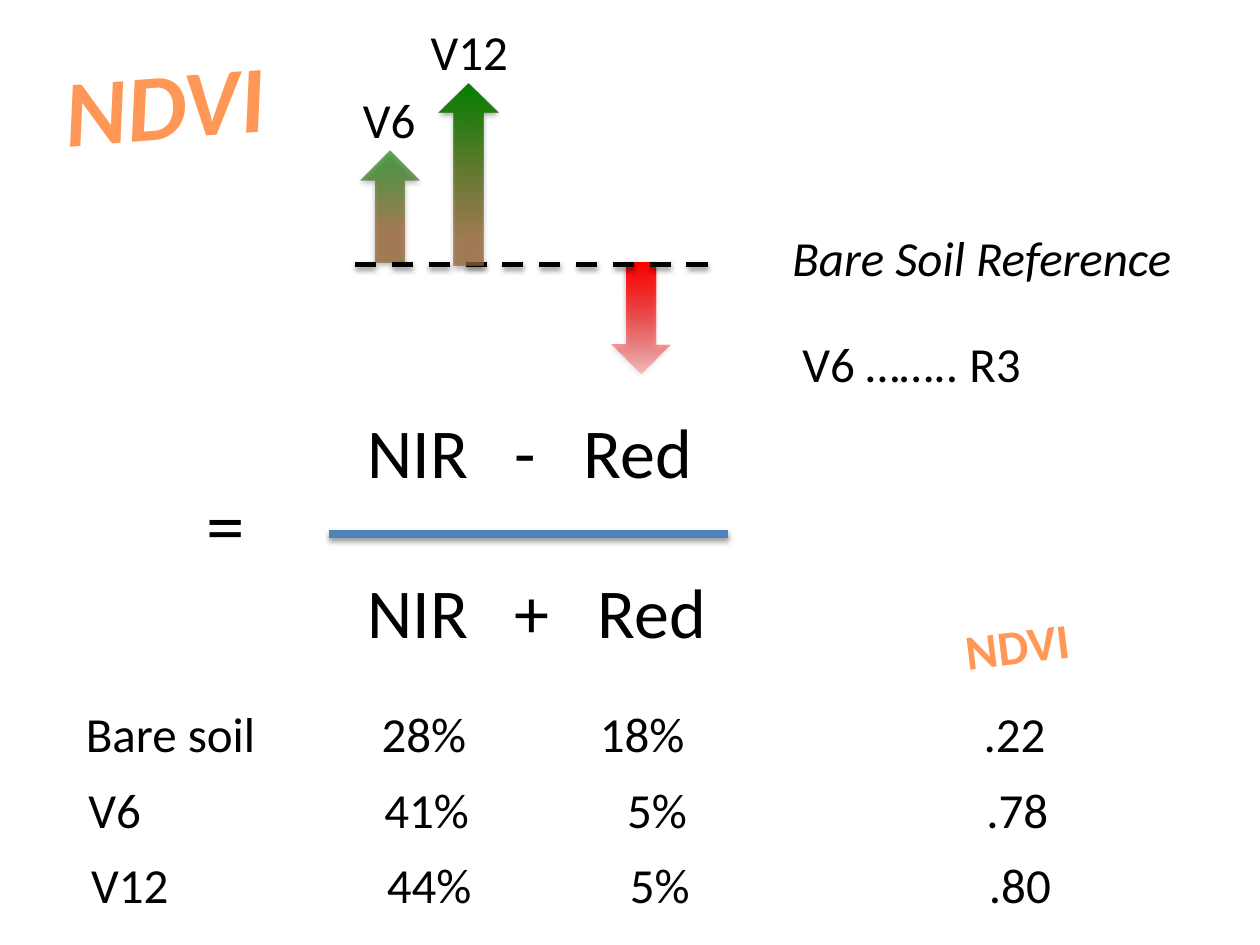
from lxml.etree import SubElement, Element
from pptx import Presentation
from pptx.dml.color import RGBColor as RGB
from pptx.enum.dml import MSO_LINE as Dash
from pptx.enum.shapes import MSO_CONNECTOR as Conn, MSO_SHAPE as Kind
from pptx.oxml.ns import qn
from pptx.util import Pt

HUES = {
    "ink": "000000",
    "title": "FF9856",
    "rule": "4F81BD",
    "soil": "996633",
    "leaf": "008000",
    "red": "FF0000",
    "paper": "FFFFFF",
}


def hue(name):
    return RGB.from_string(HUES[name])


def add_tabs(para, tabs):
    stops = Element(qn("a:tabLst"))
    for pos, side in tabs:
        SubElement(stops, qn("a:tab"), pos=str(Pt(pos)), algn=side)
    para._p.get_or_add_pPr().insert(0, stops)


def add_text(slide, text, x, y, w, h, size=28, color="ink",
             bold=False, slant=False, turn=0, tabs=()):
    box = slide.shapes.add_textbox(Pt(x), Pt(y), Pt(w), Pt(h))
    box.rotation = turn
    frame = box.text_frame
    frame.word_wrap = bool(tabs)
    para = frame.paragraphs[0]
    para.text = text
    font = para.font
    font.name, font.size = "Calibri", Pt(size)
    font.bold, font.italic = bold, slant
    font.color.rgb = hue(color)
    if tabs:
        add_tabs(para, tabs)
    return box


def add_shade(shape, alpha, dist):
    props = shape._element.spPr
    effects = SubElement(props, qn("a:effectLst"))
    shade = SubElement(effects, qn("a:outerShdw"), blurRad=str(Pt(3.1)),
                       dist=str(Pt(dist)), dir="5400000", rotWithShape="0")
    tint = SubElement(shade, qn("a:srgbClr"), val=HUES["ink"])
    SubElement(tint, qn("a:alpha"), val=str(alpha * 1000))


def add_arrow(slide, x, y, h, stops, turn=0):
    arrow = slide.shapes.add_shape(Kind.UP_ARROW, Pt(x), Pt(y), Pt(34), Pt(h))
    arrow.rotation = turn
    arrow.line.fill.background()
    arrow.fill.gradient()
    arrow.fill.gradient_angle = 90
    for stop, (pos, color, alpha) in zip(arrow.fill.gradient_stops, stops):
        stop.position = pos / 100
        stop.color.rgb = hue(color)
    tints = arrow._element.spPr.iter(qn("a:srgbClr"))
    for tint, (pos, color, alpha) in zip(tints, stops):
        SubElement(tint, qn("a:alpha"), val=str(alpha * 1000))
    add_shade(arrow, 35, 1.8)


def add_rule(slide, x, y, w, color, width, dash=None):
    rule = slide.shapes.add_connector(Conn.STRAIGHT, Pt(x), Pt(y), Pt(x + w), Pt(y))
    rule.line.color.rgb = hue(color)
    rule.line.width = Pt(width)
    if dash:
        rule.line.dash_style = dash
    add_shade(rule, 38, 1.6)


def add_ratio(slide):
    add_text(slide, "=", 110.9, 268.6, 36.7, 60.5, size=44)
    for sign, y, w, red in (("-", 229.7, 203, 123.5), ("+", 321.1, 211, 131.5)):
        add_text(slide, f"NIR\t{sign}\tRed", 203, y, w, 55.4, size=40,
                 tabs=((84, "l"), (red, "l")))
    add_rule(slide, 187.9, 305.3, 228.3, "rule", 4.5)


def add_rows(slide):
    tabs = ((169, "l"), (342, "r"), (513, "l"))
    rows = (("Bare soil", "28%", "18%", ".22"),
            ("V6", "41%", "5%", ".78"),
            ("V12", "44%", "5%", ".80"))
    for i, row in enumerate(rows):
        add_text(slide, "\t".join(row), 42 + 1.5 * i, 398.6 + 43.2 * i, 573, 41, tabs=tabs)


def add_shift(slide):
    add_arrow(slide, 205.9, 86.4, 63.4, ((30, "soil", 75), (100, "leaf", 65)))
    add_arrow(slide, 349.2, 149.8, 63.4, ((0, "red", 100), (100, "red", 20)), turn=180)
    add_rule(slide, 203, 151.2, 203, "ink", 3, Dash.DASH)
    add_arrow(slide, 250.6, 47.5, 104.4, ((14, "soil", 75), (100, "leaf", 100)))
    add_text(slide, "V6", 200.2, 47.5, 44.6, 41)
    add_text(slide, "V12", 239, 8.6, 59, 41)
    add_text(slide, "Bare Soil Reference", 445.7, 126.7, 241.9, 41, slant=True)
    add_text(slide, "V6 …….. R3", 451.4, 187.2, 140.4, 41)


def main():
    deck = Presentation()
    deck.slide_width, deck.slide_height = Pt(720), Pt(540)
    slide = deck.slides.add_slide(deck.slide_layouts[6])
    add_text(slide, "NDVI", 29.5, 21.6, 144.7, 72.7, size=54, color="title",
             bold=True, slant=True, turn=355.6)
    add_ratio(slide)
    add_rows(slide)
    add_shift(slide)
    label = add_text(slide, "NDVI", 544.3, 347.8, 75.6, 41, color="title",
                     bold=True, turn=352.9)
    label.fill.solid()
    label.fill.fore_color.rgb = hue("paper")
    deck.save("out.pptx")


if __name__ == "__main__":
    main()
